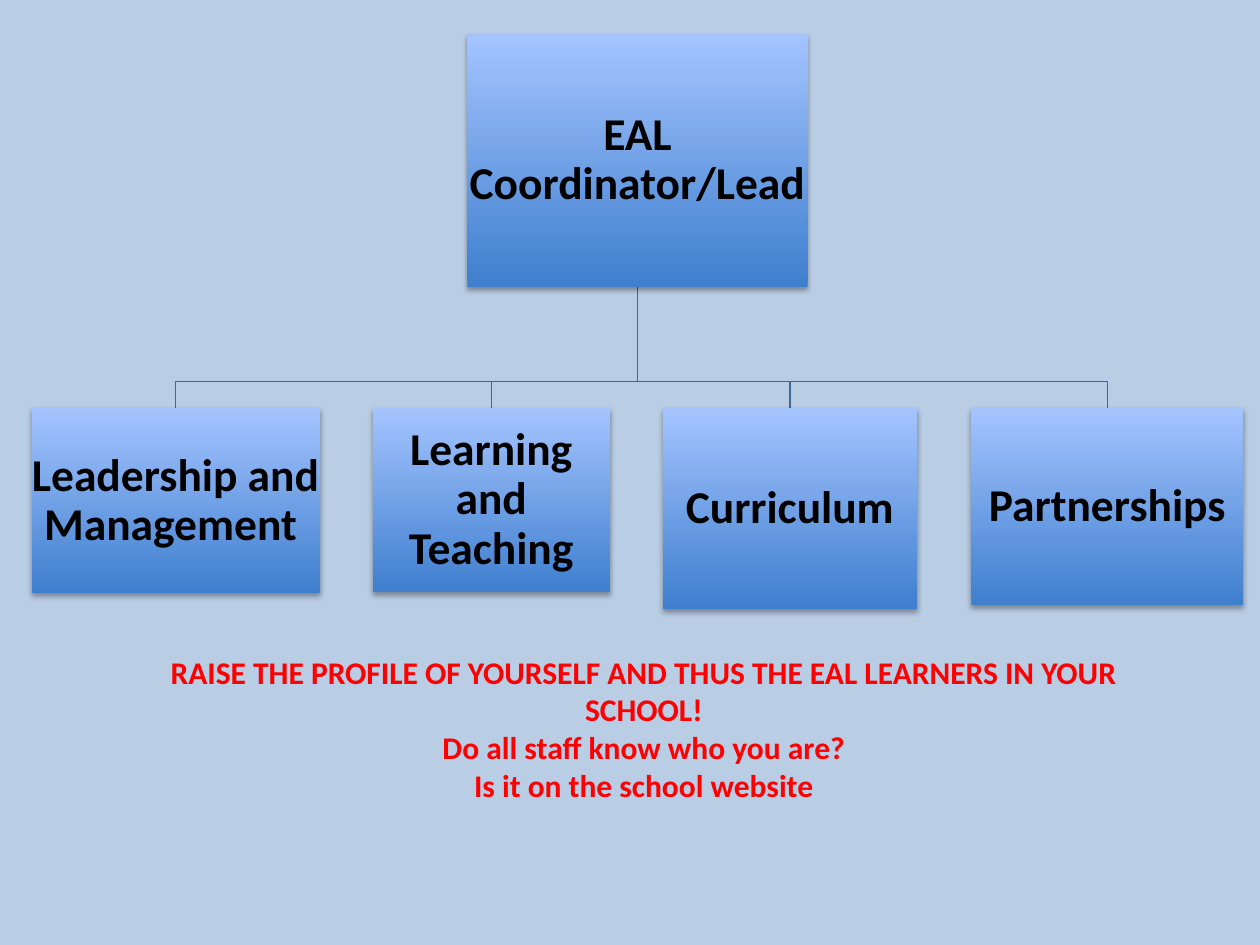
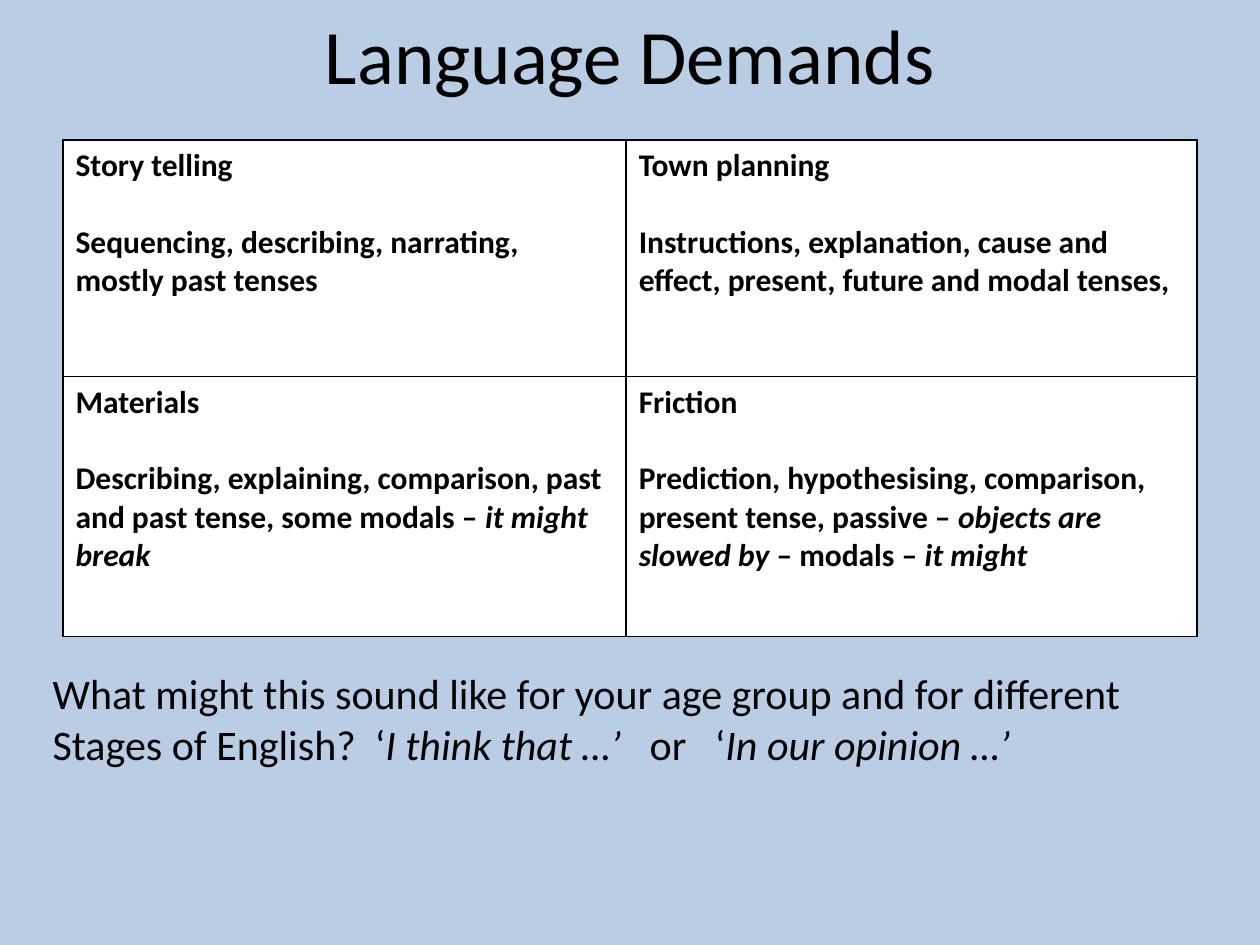
from dataclasses import dataclass

from lxml.etree import SubElement
from pptx import Presentation
from pptx.dml.color import RGBColor
from pptx.enum.shapes import MSO_SHAPE
from pptx.enum.text import MSO_ANCHOR, PP_ALIGN
from pptx.oxml.ns import qn
from pptx.util import Inches, Pt

# Content: boxes are (text, left, top, width, height) in inches
LEAD = ("EAL Coordinator/Lead", 3.71, 0.27, 2.7, 2.01)
AREAS_TOP = 3.24
AREAS = [
    ("Leadership and Management ", 0.25, AREAS_TOP, 2.29, 1.47),
    ("Learning and Teaching", 2.96, AREAS_TOP, 1.88, 1.46),
    ("Curriculum", 5.26, AREAS_TOP, 2.02, 1.59),
    ("Partnerships", 7.71, AREAS_TOP, 2.16, 1.56),
]
BRANCH_Y = 3.03
ADVICE = [
    "RAISE THE PROFILE OF YOURSELF AND THUS THE EAL LEARNERS IN YOUR SCHOOL!",
    "Do all staff know who you are?",
    "Is it on the school website",
]

# Rich text is a list of runs; every second run is italic
DEMANDS_TITLE = "Language Demands"
DEMANDS = [
    [
        ("Story telling", ["Sequencing, describing, narrating, mostly past tenses"]),
        ("Town planning", ["Instructions, explanation, cause and effect, present, "
                           "future and modal tenses,"]),
    ],
    [
        ("Materials", ["Describing, explaining, comparison, past and past tense, "
                       "some modals – ", "it might break"]),
        ("Friction", ["Prediction, hypothesising, comparison, present tense, passive – ",
                      "objects are slowed by ", "– modals – ", "it might"]),
    ],
]
COLUMN_WIDTHS = [4.47, 4.53]
ROW_HEIGHTS = [1.88, 2.06]
QUESTION = [
    "What might this sound like for your age group and for different "
    "Stages of English?  ‘", "I think that …’   ", "or   ‘", "In our opinion …’",
]


@dataclass(frozen=True)
class Theme:
    font: str = "Calibri"
    background: str = "B9CDE5"
    text: str = "000000"
    accent: str = "FF0000"
    cell: str = "FFFFFF"
    connector: str = "3F6797"
    box_bottom: str = "3F7FCE"
    box_top: str = "A4C4FF"
    title_size: int = 44
    box_size: int = 26
    question_size: int = 24
    body_size: int = 18


THEME = Theme()
# No side margins: the longest word nearly fills the lead box
BOX_FRAME = {"word_wrap": True, "vertical_anchor": MSO_ANCHOR.MIDDLE,
             "margin_left": 0, "margin_right": 0,
             "margin_top": Inches(0.02), "margin_bottom": Inches(0.02)}
BOX_PARAGRAPH = {"alignment": PP_ALIGN.CENTER, "line_spacing": 0.9}
CENTERED = {"alignment": PP_ALIGN.CENTER}


# Shared helpers
def apply(target, values):
    for name, value in values.items():
        setattr(target, name, value)


def write(paragraph, runs, size, color=THEME.text, bold=False, layout=None):
    apply(paragraph, layout or {})
    for index, text in enumerate(runs):
        run = paragraph.add_run()
        run.text = text
        apply(run.font, {"name": THEME.font, "size": Pt(size),
                         "bold": bold, "italic": index % 2 == 1})
        run.font.color.rgb = RGBColor.from_string(color)


def add_paragraphs(frame, count):
    for _ in range(count - 1):
        frame.add_paragraph()
    return frame.paragraphs


def add_text_box(slide, left, top, width, height):
    frame = slide.shapes.add_textbox(*map(Inches, (left, top, width, height))).text_frame
    frame.word_wrap = True
    return frame


# Organisation chart parts
def add_shadow(shape):
    shape.shadow.inherit = False
    effects = shape._element.spPr.find(qn("a:effectLst"))
    shadow = SubElement(effects, qn("a:outerShdw"), blurRad=str(Pt(3.1)),
                        dist=str(Pt(1.8)), dir="5400000", rotWithShape="0")
    color = SubElement(shadow, qn("a:srgbClr"), val="000000")
    SubElement(color, qn("a:alpha"), val="35000")


def add_box(slide, text, *place):
    shape = slide.shapes.add_shape(MSO_SHAPE.RECTANGLE, *map(Inches, place))
    shape.fill.gradient()
    shape.fill.gradient_angle = 90
    for stop, color in zip(shape.fill.gradient_stops, (THEME.box_bottom, THEME.box_top)):
        stop.color.rgb = RGBColor.from_string(color)
    shape.line.fill.background()
    add_shadow(shape)
    apply(shape.text_frame, BOX_FRAME)
    write(shape.text_frame.paragraphs[0], [text], THEME.box_size,
          bold=True, layout=BOX_PARAGRAPH)


def add_branch(slide, parent, child):
    _, left, top, width, height = parent
    start_x, start_y = left + width / 2, top + height
    end_x, end_y = child[1] + child[3] / 2, child[2]
    points = [(start_x, BRANCH_Y), (end_x, BRANCH_Y), (end_x, end_y)]
    builder = slide.shapes.build_freeform(Inches(start_x), Inches(start_y))
    builder.add_line_segments([(Inches(x), Inches(y)) for x, y in points], close=False)
    branch = builder.convert_to_shape()
    branch.shadow.inherit = False
    branch.fill.background()
    branch.line.color.rgb = RGBColor.from_string(THEME.connector)
    branch.line.width = Pt(0.75)


def build_roles(presentation):
    slide = presentation.slides.add_slide(presentation.slide_layouts[6])
    for area in reversed(AREAS):
        add_branch(slide, LEAD, area)
    for box in [LEAD, *AREAS]:
        add_box(slide, *box)
    frame = add_text_box(slide, 0.91, 5.13, 8.4, 1.31)
    for paragraph, text in zip(add_paragraphs(frame, len(ADVICE)), ADVICE):
        write(paragraph, [text], THEME.body_size, THEME.accent, True, CENTERED)


# Language table parts
def style_cell(cell):
    properties = cell._tc.get_or_add_tcPr()
    for edge in ("lnL", "lnR", "lnT", "lnB"):
        line = SubElement(properties, qn(f"a:{edge}"), w=str(Pt(1)))
        fill = SubElement(line, qn("a:solidFill"))
        SubElement(fill, qn("a:srgbClr"), val=THEME.text)
    cell.fill.solid()
    cell.fill.fore_color.rgb = RGBColor.from_string(THEME.cell)


def add_demands_table(slide):
    place = (0.5, 1.11, sum(COLUMN_WIDTHS), sum(ROW_HEIGHTS))
    table = slide.shapes.add_table(len(DEMANDS), len(DEMANDS[0]), *map(Inches, place)).table
    apply(table, {"first_row": False, "horz_banding": False})
    for column, width in zip(table.columns, COLUMN_WIDTHS):
        column.width = Inches(width)
    for row, height, entries in zip(table.rows, ROW_HEIGHTS, DEMANDS):
        row.height = Inches(height)
        for cell, (topic, language) in zip(row.cells, entries):
            style_cell(cell)
            heading, detail = add_paragraphs(cell.text_frame, 2)
            write(heading, [topic], THEME.body_size, bold=True)
            write(detail, language, THEME.body_size, bold=True,
                  layout={"space_before": Pt(22)})


def build_demands(presentation):
    slide = presentation.slides.add_slide(presentation.slide_layouts[5])
    title = slide.shapes.title
    apply(title, {"left": Inches(0.5), "top": Inches(-0.2),
                  "width": Inches(9), "height": Inches(1.25)})
    title.text_frame.vertical_anchor = MSO_ANCHOR.MIDDLE
    write(title.text_frame.paragraphs[0], [DEMANDS_TITLE], THEME.title_size, layout=CENTERED)
    add_demands_table(slide)
    frame = add_text_box(slide, 0.32, 5.25, 9.4, 0.91)
    write(frame.paragraphs[0], QUESTION, THEME.question_size)


def main():
    presentation = Presentation()
    apply(presentation, {"slide_width": Inches(10), "slide_height": Inches(7.5)})
    background = presentation.slide_master.background.fill
    background.solid()
    background.fore_color.rgb = RGBColor.from_string(THEME.background)
    build_roles(presentation)
    build_demands(presentation)
    presentation.save("out.pptx")


if __name__ == "__main__":
    main()
